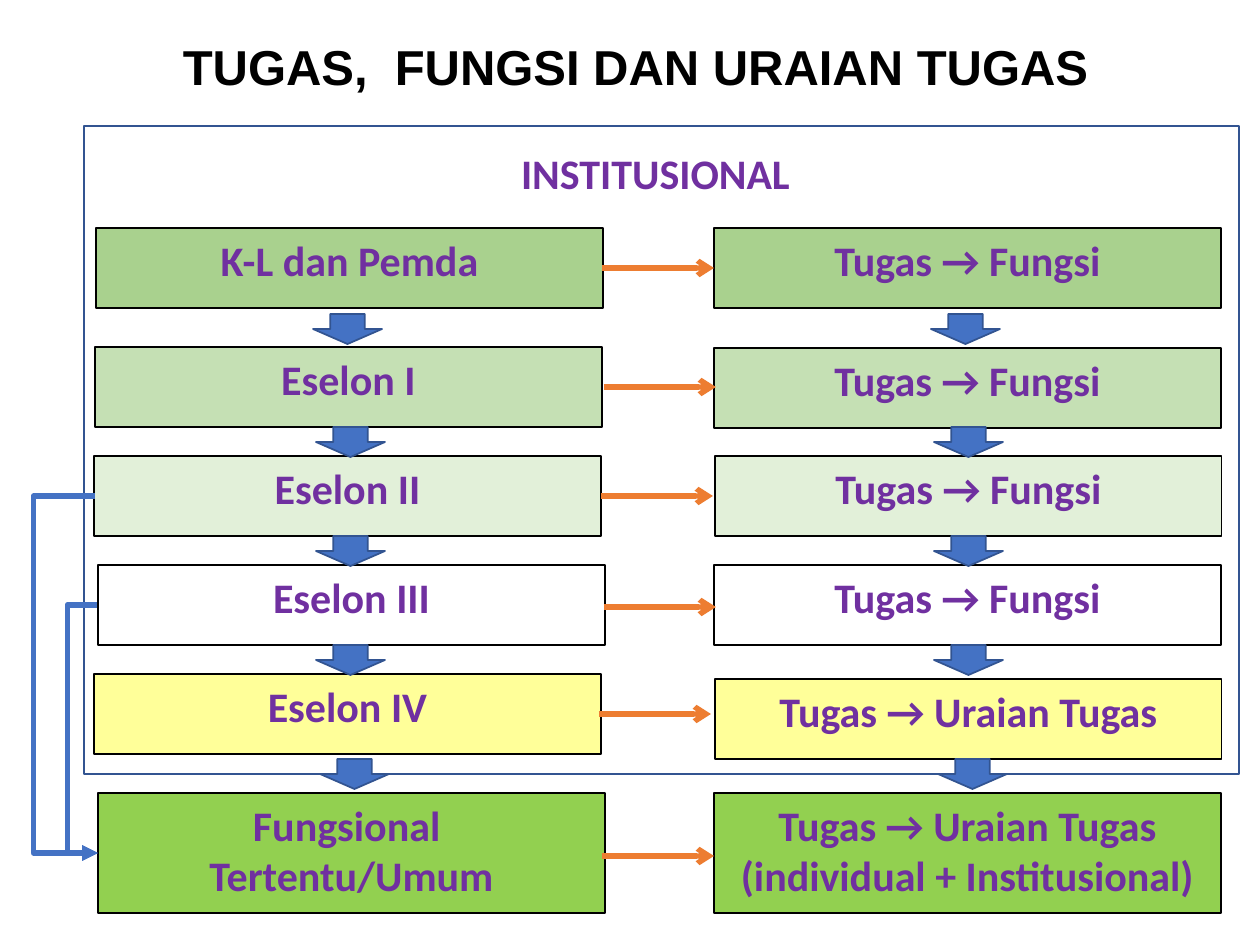
"""Build the slide on tasks, functions and job descriptions by echelon."""
import pptx
import pptx.util
import pptx.dml.color
import pptx.enum.shapes
import pptx.enum.text
import pptx.oxml.ns
from lxml import etree

SCALE = 914400 // 126
COLORS = {
    "ink": "000000", "text": "7030A0", "blue": "4472C4", "edge": "325491",
    "orange": "ED7D31", "green1": "A9D18E", "green2": "C5E0B4",
    "green3": "E2F0D9", "white": "FFFFFF", "yellow": "FFFF99", "lime": "92D050",
}
TITLE = "TUGAS,  FUNGSI DAN URAIAN TUGAS"
HEADING = "INSTITUSIONAL"
BOX_WIDTH, BOX_HEIGHT, LAST_HEIGHT = 507, 80, 120
FRAME = (84, 126, 1155, 648)
LEVELS = [
    ("K-L dan Pemda", "Tugas → Fungsi", "green1", (96, 228), (714, 228)),
    ("Eselon I", "Tugas → Fungsi", "green2", (95, 347), (714, 348)),
    ("Eselon II", "Tugas → Fungsi", "green3", (94, 456), (715, 456)),
    ("Eselon III", "Tugas → Fungsi", "white", (98, 565), (714, 565)),
    ("Eselon IV", "Tugas → Uraian Tugas", "yellow", (94, 674), (715, 679)),
    ("Fungsional  Tertentu/Umum",
     "Tugas → Uraian Tugas (individual + Institusional)",
     "lime", (98, 793), (714, 793)),
]
DOWN_ARROWS = [(313, 314), (316, 427), (316, 536), (316, 645), (320, 759)]
COLUMN_STEP = 618
ACROSS_ARROWS = [(602, 268), (604, 387), (601, 496), (604, 607), (599, 714), (602, 856)]
ACROSS_LENGTH = 112
BYPASSES = [(95, 496, 33), (97, 605, 67)]
BYPASS_END = (98, 853)


def px(value):
    return pptx.util.Emu(value * SCALE)


def rgb(name):
    return pptx.dml.color.RGBColor.from_string(COLORS[name])


def write(box, text, size, font, color):
    frame = box.text_frame
    frame.word_wrap = True
    para = frame.paragraphs[0]
    para.text = text
    para.alignment = pptx.enum.text.PP_ALIGN.CENTER
    para.font.size = pptx.util.Pt(size)
    para.font.name = font
    para.font.bold = True
    para.font.color.rgb = rgb(color)
    return para


def add_shape(page, kind, place, fill, line, weight):
    shape = page.shapes.add_shape(kind, *map(px, place))
    shape.shadow.inherit = False
    if fill:
        shape.fill.solid()
        shape.fill.fore_color.rgb = rgb(fill)
    else:
        shape.fill.background()
    shape.line.color.rgb = rgb(line)
    shape.line.width = pptx.util.Pt(weight)
    return shape


def add_label(box, text):
    box.text_frame.vertical_anchor = pptx.enum.text.MSO_ANCHOR.TOP
    write(box, text, 24, "Calibri", "text").space_before = pptx.util.Pt(6)


def add_arrow(page, kind, start, end, color, head):
    arrow = page.shapes.add_connector(kind, *map(px, start + end))
    arrow.line.color.rgb = rgb(color)
    arrow.line.width = pptx.util.Pt(3)
    qn = pptx.oxml.ns.qn
    etree.SubElement(arrow.line._get_or_add_ln(), qn("a:tailEnd"), type=head)
    properties = arrow._element.spPr
    etree.SubElement(properties, qn("a:effectLst"))
    return properties


def add_bypass(page, left, top, turn):
    properties = add_arrow(page, pptx.enum.shapes.MSO_CONNECTOR.ELBOW,
                           (left, top), BYPASS_END, "blue", "triangle")
    qn = pptx.oxml.ns.qn
    guides = properties.find(qn("a:prstGeom")).find(qn("a:avLst"))
    ratio = round((turn - left) / (BYPASS_END[0] - left) * 100000)
    etree.SubElement(guides, qn("a:gd"), name="adj1", fmla=f"val {ratio}")


def main():
    deck = pptx.Presentation()
    deck.slide_width, deck.slide_height = px(1260), px(945)
    page = deck.slides.add_slide(deck.slide_layouts[6])
    shapes = pptx.enum.shapes.MSO_SHAPE
    add_shape(page, shapes.RECTANGLE, FRAME, None, "edge", 1)

    title = page.shapes.add_textbox(*map(px, (100, 33, 1071, 69)))
    title.text_frame.vertical_anchor = pptx.enum.text.MSO_ANCHOR.BOTTOM
    write(title, TITLE, 28, "Arial", "ink").line_spacing = 0.9

    for left_text, right_text, fill, left_place, right_place in LEVELS:
        height = LAST_HEIGHT if fill == "lime" else BOX_HEIGHT
        for text, place in ((left_text, left_place), (right_text, right_place)):
            box = add_shape(page, shapes.RECTANGLE, place + (BOX_WIDTH, height),
                            fill, "ink", 0.75)
            add_label(box, text)

    for left, top in DOWN_ARROWS:
        for shift in (0, COLUMN_STEP):
            add_shape(page, shapes.DOWN_ARROW, (left + shift, top, 69, 30),
                      "blue", "edge", 1)

    for left, top in ACROSS_ARROWS:
        add_arrow(page, pptx.enum.shapes.MSO_CONNECTOR.STRAIGHT,
                  (left, top), (left + ACROSS_LENGTH, top), "orange", "arrow")

    heading = page.shapes.add_textbox(*map(px, (402, 141, BOX_WIDTH, BOX_HEIGHT)))
    add_label(heading, HEADING)

    for bypass in BYPASSES:
        add_bypass(page, *bypass)
    deck.save("out.pptx")


if __name__ == "__main__":
    main()
